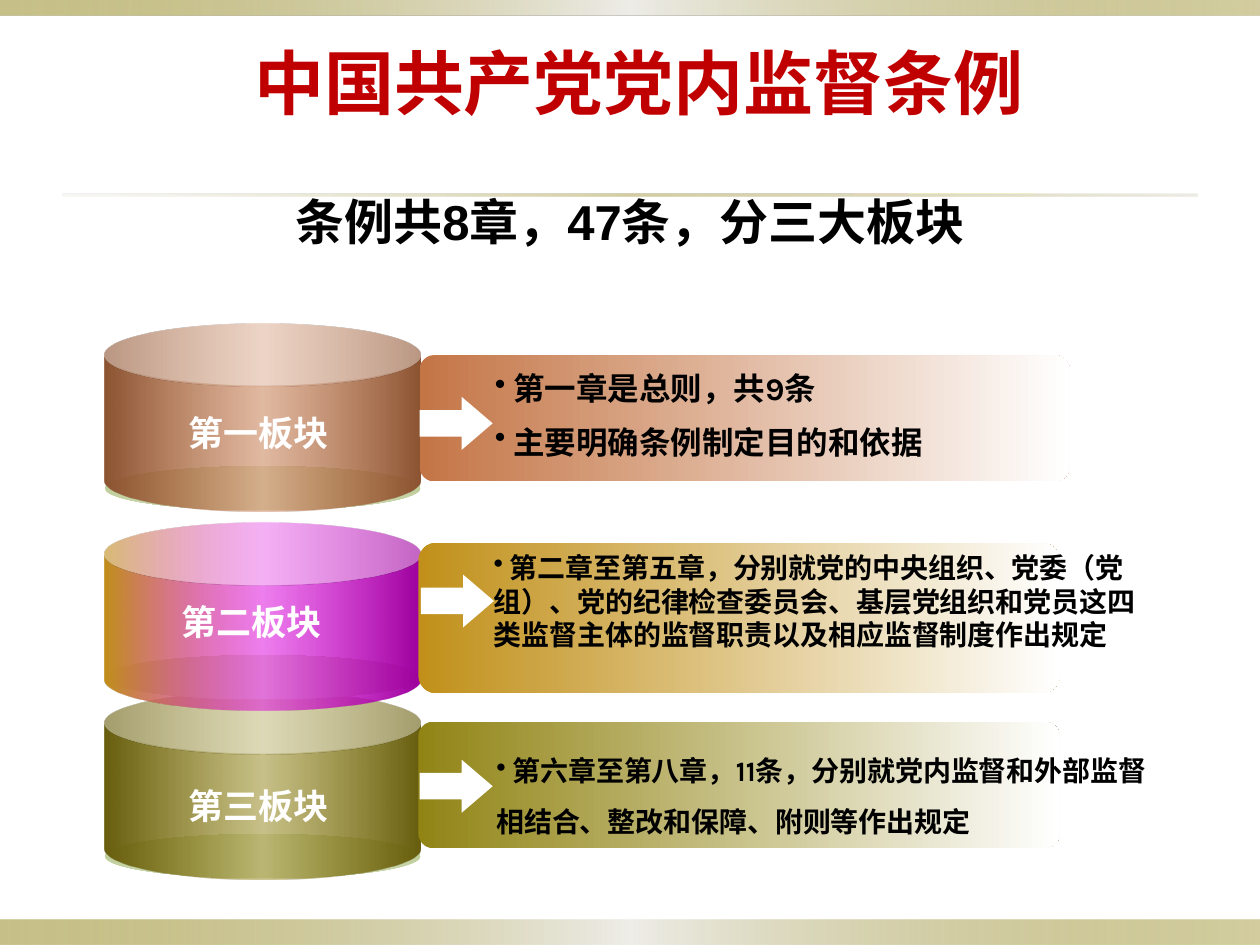
from lxml import etree
from pptx import Presentation
from pptx.dml.color import RGBColor
from pptx.enum import shapes, text
from pptx.oxml import ns
from pptx.util import Inches, Pt

INK = {
    "white": "FFFFFF", "black": "000000", "red": "C00000",
    "olive": "918415", "moss": "685E0F", "pale": "EEEDE8", "stone": "DCD9CC",
    "sage": "C1CF9D", "mist": "E5EBD5", "gold": "C1901A", "pink": "DD00DD",
    "plum": "9E009E", "brown": "8C5432", "copper": "C47546",
}
KIND = shapes.MSO_SHAPE

# Each color stop is (position %, color, opacity %).
RIM = [(0, "sage", 100), (50, "mist", 100), (100, "sage", 100)]
BAR = [(0, "olive", 50), (50, "pale", 100), (100, "olive", 40)]
RULE = [(0, "stone", 20), (50, "olive", 40), (100, "stone", 50)]

# Boxes are (left, top, width, height); bands run from the bottom up, so
# that each can stands over the one below it.
BANDS = [
    dict(can=(0.83, 5.49, 2.51, 1.49), rim=1.13, tones=("moss", "olive", "moss"),
         name="第三板块", label=(0.89, 6.18), panel=(3.32, 5.73, 5.09, 1),
         tint="olive", arrow=(3.33, 6.03), note=(3.84, 5.8, 5.42, 0.86),
         size=16, line=1.5,
         lines=["第六章至第八章，11条，分别就党内监督和外部监督相结合、整改和保障、附则等作出规定"]),
    dict(can=(0.83, 4.15, 2.51, 1.49), rim=1.05, tones=("gold", "pink", "plum"),
         name="第二板块", label=(0.83, 4.72), panel=(3.32, 4.31, 5.09, 1.19),
         tint="gold", arrow=(3.34, 4.56), note=(3.82, 4.32, 5.43, 0.91),
         size=16, line=None,
         lines=["第二章至第五章，分别就党的中央组织、党委（党组）、党的纪律检查委员会、"
                "基层党组织和党员这四类监督主体的监督职责以及相应监督制度作出规定"]),
    dict(can=(0.83, 2.57, 2.51, 1.49), rim=1.13, tones=("brown", "copper", "brown"),
         name="第一板块", label=(0.89, 3.22), panel=(3.33, 2.82, 5.16, 1),
         tint="copper", arrow=(3.33, 3.15), note=(3.83, 2.88, 5.42, 0.86),
         size=18, line=None,
         lines=["第一章是总则，共9条", "主要明确条例制定目的和依据"]),
]


def rgb(name):
    return RGBColor.from_string(INK[name])


def inch(box):
    return [Inches(v) for v in box]


def blend(shape, stops):
    """Fill a shape with a left-to-right gradient."""
    shape.fill.gradient()
    shape.fill.gradient_angle = 0
    track = shape._element.spPr.find(ns.qn("a:gradFill")).find(ns.qn("a:gsLst"))
    for old in list(track):
        track.remove(old)
    for pos, name, alpha in stops:
        stop = etree.SubElement(track, ns.qn("a:gs"), pos=str(pos * 1000))
        tone = etree.SubElement(stop, ns.qn("a:srgbClr"), val=INK[name])
        if alpha < 100:
            etree.SubElement(tone, ns.qn("a:alpha"), val=str(alpha * 1000))


def draw(slide, kind, box, fill, adjust=()):
    """Add a borderless shape; fill is a color name or a list of stops."""
    shape = slide.shapes.add_shape(kind, *inch(box))
    shape.shadow.inherit = False
    shape.line.fill.background()
    for i, value in enumerate(adjust):
        shape.adjustments[i] = value
    if isinstance(fill, str):
        shape.fill.solid()
        shape.fill.fore_color.rgb = rgb(fill)
    else:
        blend(shape, fill)
    return shape


def write(para, words, size, color, face, before):
    para.space_before = Pt(before)
    run = para.add_run()
    run.text = words
    font = run.font
    font.name, font.size, font.bold = face, Pt(size), True
    font.color.rgb = rgb(color)


def mark(para, char):
    """Set a bullet character, or none, without an indent."""
    props = para._p.get_or_add_pPr()
    props.set("marL", "0")
    props.set("indent", "0")
    if char:
        etree.SubElement(props, ns.qn("a:buChar"), char=char)
    else:
        etree.SubElement(props, ns.qn("a:buNone"))


def add_text(slide, box):
    frame = slide.shapes.add_textbox(*inch(box)).text_frame
    frame.word_wrap = True
    return frame


def add_frame(slide):
    """Draw the edge bars and the rule below the title."""
    draw(slide, KIND.RECTANGLE, (0, 7.3, 10, 0.2), BAR)
    draw(slide, KIND.RECTANGLE, (0, 0, 10, 0.12), BAR)
    draw(slide, KIND.RECTANGLE, (0.5, 1.54, 9, 0.02), RULE)


def add_head(holder, box, words, size, color, anchor, before):
    holder.left, holder.top, holder.width, holder.height = inch(box)
    frame = holder.text_frame
    frame.vertical_anchor = anchor
    frame.auto_size = text.MSO_AUTO_SIZE.NONE
    para = frame.paragraphs[0]
    para.alignment = text.PP_ALIGN.CENTER
    write(para, words, size, color, "Arial", before)
    mark(para, None)


def add_can(slide, band):
    left, top, width, height = band["can"]
    draw(slide, KIND.OVAL, (left, top + band["rim"], width, 0.35), RIM)
    first, mid, last = band["tones"]
    draw(slide, KIND.CAN, (left, top, width, height),
         [(0, first, 100), (50, mid, 50), (100, last, 100)], [0.332])
    para = add_text(slide, (*band["label"], 2.33, 0.43)).paragraphs[0]
    para.alignment = text.PP_ALIGN.CENTER
    write(para, band["name"], 20, "white", "Karla", 10)


def add_panel(slide, band):
    draw(slide, KIND.ROUNDED_RECTANGLE, band["panel"],
         [(0, band["tint"], 100), (100, "white", 100)], [0.115])
    frame = add_text(slide, band["note"])
    for i, words in enumerate(band["lines"]):
        para = frame.add_paragraph() if i else frame.paragraphs[0]
        para.line_spacing = band["line"]
        write(para, " " + words, band["size"], "black", "Karla", band["size"] / 2)
        mark(para, "•")
    draw(slide, KIND.RIGHT_ARROW, (*band["arrow"], 0.58, 0.42), "white", [0.5, 0.583])


def main():
    deck = Presentation()
    deck.slide_width, deck.slide_height = Inches(10), Inches(7.5)
    slide = deck.slides.add_slide(deck.slide_layouts[1])
    slide.background.fill.solid()
    slide.background.fill.fore_color.rgb = rgb("white")
    add_frame(slide)
    add_head(slide.shapes.title, (0.07, 0.21, 10, 0.87), "中国共产党党内监督条例",
             40, "red", text.MSO_ANCHOR.MIDDLE, 0)
    add_head(slide.placeholders[1], (0, 1.47, 10, 0.63), "条例共8章，47条，分三大板块",
             28, "black", text.MSO_ANCHOR.TOP, 5.6)
    for band in BANDS:
        add_can(slide, band)
        add_panel(slide, band)
    deck.save("out.pptx")


if __name__ == "__main__":
    main()
